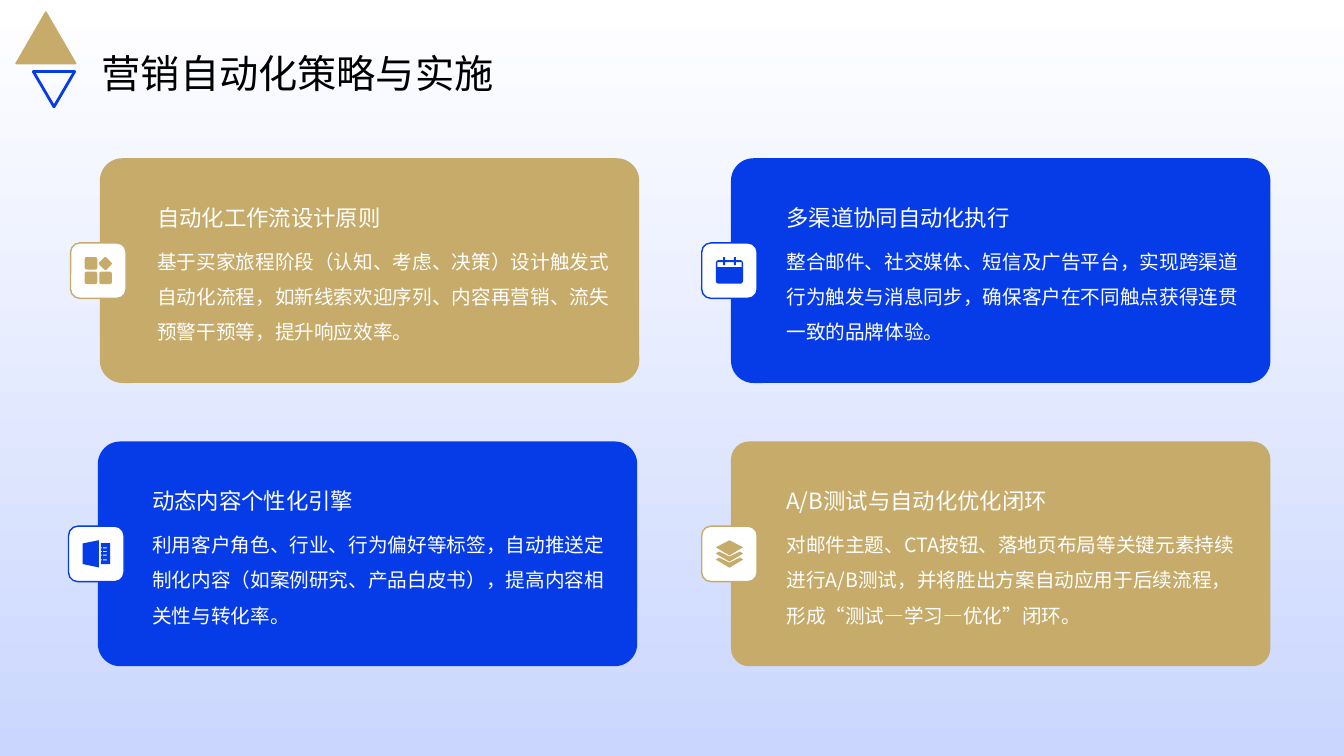
import math

import pptx
import pptx.dml.color
import pptx.enum.shapes
import pptx.enum.text
import pptx.oxml
import pptx.oxml.ns
import pptx.util

PX = 9144
FONT = "Noto Sans CJK SC"
COLOURS = {"gold": "C6AB6A", "blue": "063CE8", "white": "FFFFFF", "mist": "CAD6FE", "black": "000000"}
SHAPES = pptx.enum.shapes.MSO_SHAPE
ANCHORS = pptx.enum.text.MSO_ANCHOR
CARD_WIDTH, CARD_HEIGHT = 535, 223

CARDS = [
    {"left": 99, "top": 157, "indent": 57, "corner": 0.1, "colour": "gold", "icon": "blocks",
     "head": "自动化工作流设计原则",
     "body": "基于买家旅程阶段（认知、考虑、决策）设计触发式自动化流程，如新线索欢迎序列、内容再营销、流失预警干预等，提升响应效率。"},
    {"left": 725, "top": 157, "indent": 55, "corner": 0.1, "colour": "blue", "icon": "calendar",
     "head": "多渠道协同自动化执行",
     "body": "整合邮件、社交媒体、短信及广告平台，实现跨渠道行为触发与消息同步，确保客户在不同触点获得连贯一致的品牌体验。"},
    {"left": 97, "top": 438, "indent": 54, "corner": 0.1, "colour": "blue", "icon": "book",
     "head": "动态内容个性化引擎",
     "body": "利用客户角色、行业、行为偏好等标签，自动推送定制化内容（如案例研究、产品白皮书），提高内容相关性与转化率。"},
    {"left": 725, "top": 438, "indent": 55, "corner": 0.08, "colour": "gold", "icon": "layers",
     "head": "A/B测试与自动化优化闭环",
     "body": "对邮件主题、CTA按钮、落地页布局等关键元素持续进行A/B测试，并将胜出方案自动应用于后续流程，形成“测试—学习—优化”闭环。"},
]


def rgb(name):
    """Return the named colour."""
    return pptx.dml.color.RGBColor.from_string(COLOURS[name])


def emu(*lengths):
    """Turn px lengths into EMU."""
    return [length * PX for length in lengths]


def paint(shape, fill=None, line=None, weight=1):
    """Set the fill and line of a shape and take its shadow away."""
    shape.shadow.inherit = False
    if fill:
        shape.fill.solid()
        shape.fill.fore_color.rgb = rgb(fill)
    else:
        shape.fill.background()
    if line:
        shape.line.color.rgb = rgb(line)
        shape.line.width = pptx.util.Pt(weight)
    else:
        shape.line.fill.background()


def add_preset(page, kind, box, fill=None, line=None, weight=1):
    """Add a painted preset shape in the given box."""
    shape = page.shapes.add_shape(kind, *emu(*box))
    paint(shape, fill, line, weight)
    return shape


def write(frame, text, size, colour, spacing, anchor):
    """Write one left-aligned paragraph into a text frame."""
    frame.word_wrap = True
    frame.auto_size = pptx.enum.text.MSO_AUTO_SIZE.NONE
    frame.vertical_anchor = anchor
    para = frame.paragraphs[0]
    para.alignment = pptx.enum.text.PP_ALIGN.LEFT
    para.line_spacing = spacing
    span = para.add_run()
    span.text = text
    span.font.size = pptx.util.Pt(size)
    span.font.color.rgb = rgb(colour)
    span.font.name = FONT
    east = pptx.oxml.parse_xml(f'<a:ea {pptx.oxml.ns.nsdecls("a")} typeface="{FONT}"/>')
    span.font._element.append(east)


def add_text(page, box, text, size, spacing, anchor):
    """Add a white text box without margins."""
    frame = page.shapes.add_textbox(*emu(*box)).text_frame
    frame.margin_left = frame.margin_top = frame.margin_right = frame.margin_bottom = 0
    write(frame, text, size, "white", spacing, anchor)


def rounded(left, top, width, height, radius=0):
    """Return the outline of a rectangle with round corners."""
    points = []
    corners = [(1, 1), (0, 1), (0, 0), (1, 0)]
    for quarter, (right, low) in enumerate(corners):
        x = left + (width - radius if right else radius)
        y = top + (height - radius if low else radius)
        for step in range(5 if radius else 1):
            angle = math.pi / 2 * (quarter + step / 4)
            points.append((x + radius * math.cos(angle), y + radius * math.sin(angle)))
    return points


def icon_outlines(name):
    """Return the closed outlines of an icon on a grid of 270 units."""
    if name == "blocks":
        squares = [rounded(x, y, 125, 125, 22) for x, y in ((0, 0), (0, 145), (145, 145))]
        return squares + [[(195, 4), (205, 0), (215, 4), (266, 55), (270, 65), (266, 75),
                           (215, 126), (205, 130), (195, 126), (144, 75), (140, 65), (144, 55)]]
    if name == "calendar":
        rings = [rounded(x, y, 20, 30) for x in (72, 178) for y in (0, 50)]
        return [rounded(0, 30, 270, 235, 32), rounded(15, 50, 240, 50)] + rings
    if name == "layers":
        sheets = [[(30, y), (135, y + 50), (240, y), (270, y + 20), (135, y + 100), (0, y + 20)]
                  for y in (112, 172)]
        return [[(135, 0), (270, 70), (135, 150), (0, 70)]] + sheets
    lines = [rounded(x, y, width, 10)
             for x, width in ((180, 10), (200, 40)) for y in (72, 108, 144, 190)]
    return [[(160, 0), (160, 270), (0, 236), (0, 32)], rounded(180, 30, 92, 208)] + lines


def add_icon(page, left, top, name, colour):
    """Draw an icon as one freeform at the given corner."""
    outlines = icon_outlines(name)
    builder = page.shapes.build_freeform(*outlines[0][0], scale=PX / 10)
    for index, outline in enumerate(outlines):
        if index:
            builder.move_to(*outline[0])
        builder.add_line_segments(outline[1:], close=True)
    paint(builder.convert_to_shape(*emu(left, top)), colour)


def add_card(page, card):
    """Add a card with its badge, heading and text."""
    left, top, colour = card["left"], card["top"], card["colour"]
    panel = add_preset(page, SHAPES.ROUNDED_RECTANGLE, (left, top, CARD_WIDTH, CARD_HEIGHT), colour)
    panel.adjustments[0] = card["corner"]
    add_preset(page, SHAPES.ROUNDED_RECTANGLE, (left - 29, top + 84, 55, 55), "white", colour)
    add_icon(page, left - 15, top + 98, card["icon"], colour)
    text_left = left + card["indent"]
    add_text(page, (text_left, top, 457, 72), card["head"], 16, 1.3, ANCHORS.BOTTOM)
    add_text(page, (text_left, top + 79, 457, 131), card["body"], 14, 1.5, ANCHORS.TOP)


def add_backdrop(page, box):
    """Cover the box with a gradient from white down to mist."""
    backdrop = add_preset(page, SHAPES.RECTANGLE, box)
    backdrop.fill.gradient()
    backdrop.fill.gradient_angle = 270
    for stop, name in zip(backdrop.fill.gradient_stops, ("white", "mist")):
        stop.color.rgb = rgb(name)


def add_header(page, box):
    """Place the title and the two triangles beside it."""
    left, top, width, height = box
    add_preset(page, SHAPES.ISOSCELES_TRIANGLE, (left - 75, top - 24, 59, 51), "gold", "gold", 1.2)
    lower = add_preset(page, SHAPES.ISOSCELES_TRIANGLE, (left - 58, top + 35, 41, 35), None, "blue", 2)
    lower.rotation = 180
    title = page.shapes.title
    title.left, title.top, title.width, title.height = emu(left, top, width, height)
    write(title.text_frame, "营销自动化策略与实施", 28, "black", 1.3, ANCHORS.MIDDLE)
    title.element.getparent().append(title.element)


def main():
    """Build the slide and save it."""
    deck = pptx.Presentation()
    deck.slide_width, deck.slide_height = emu(1333, 750)
    page = deck.slides.add_slide(deck.slide_layouts[5])
    add_backdrop(page, (0, 0, 1333, 750))
    for card in CARDS:
        add_card(page, card)
    add_header(page, (91, 36, 1139, 58))
    deck.save("out.pptx")


if __name__ == "__main__":
    main()
